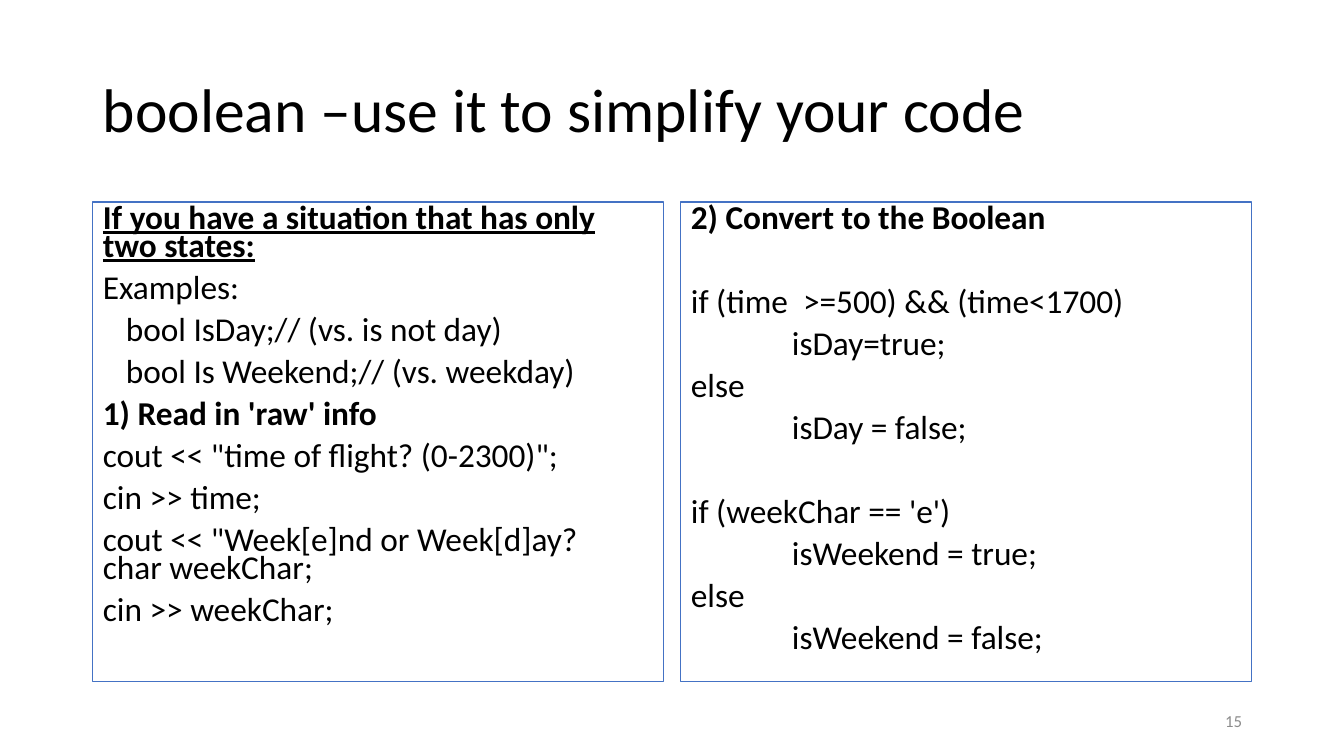
from pptx import Presentation
from pptx.dml.color import RGBColor
from pptx.enum.shapes import MSO_SHAPE as Shape
from pptx.enum.text import MSO_ANCHOR as Anchor, PP_ALIGN as Align
from pptx.util import Pt

PX = 914400 / 100.8


def px(*nums):
    return [round(n * PX) for n in nums]


def style(para, size, color="000000", bold=False, under=False):
    for run in para.runs:
        font = run.font
        font.name, font.size = "Calibri", Pt(size)
        font.bold, font.underline = bold, under
        font.color.rgb = RGBColor.from_string(color)


deck = Presentation()
deck.slide_width, deck.slide_height = px(1344, 756)
slide = deck.slides.add_slide(deck.slide_layouts[6])

# Title and slide number
labels = [
    ("boolean –use it to simplify your code", (93, 40, 1159, 146),
     44, "000000", Align.LEFT, 0.9),
    ("15", (950, 701, 302, 40), 12, "8C8C8C", Align.RIGHT, 1.0),
]
for text, rect, size, color, align, lead in labels:
    frame = slide.shapes.add_textbox(*px(*rect)).text_frame
    frame.word_wrap = True
    frame.vertical_anchor = Anchor.MIDDLE
    frame.text = text
    para = frame.paragraphs[0]
    para.alignment, para.line_spacing = align, lead
    style(para, size, color)

# Columns: text, indent in px, space before in pt, bold, underline
GAP, BREAK = 10, 40
left = [
    ("If you have a situation that has only two states:", 0, GAP, True, True),
    ("Examples:", 0, GAP, False, False),
    ("bool IsDay;// (vs. is not day)", 23, GAP, False, False),
    ("bool Is Weekend;// (vs. weekday)", 23, GAP, False, False),
    ("1) Read in 'raw' info", 0, GAP, True, False),
    ('cout << "time of flight? (0-2300)";', 0, GAP, False, False),
    ("cin >> time;", 0, GAP, False, False),
    ('cout << "Week[e]nd or Week[d]ay?\vchar weekChar;', 0, GAP, False, False),
    ("cin >> weekChar;", 0, GAP, False, False),
]
right = [
    ("2) Convert to the Boolean", 0, GAP, True, False),
    ("if (time  >=500) && (time<1700)", 0, BREAK, False, False),
    ("isDay=true;", 101, GAP, False, False),
    ("else", 0, GAP, False, False),
    ("isDay = false;", 101, GAP, False, False),
    ("if (weekChar == 'e')", 0, BREAK, False, False),
    ("isWeekend = true;", 101, GAP, False, False),
    ("else", 0, GAP, False, False),
    ("isWeekend = false;", 101, GAP, False, False),
]
for col, lines in enumerate([left, right]):
    box = slide.shapes.add_shape(
        Shape.RECTANGLE, *px(93 + 588 * col, 202, 571, 480))
    box.shadow.inherit = False
    box.fill.background()
    box.line.color.rgb = RGBColor.from_string("4472C4")
    box.line.width = Pt(0.75)
    frame = box.text_frame
    frame.word_wrap = True
    frame.vertical_anchor = Anchor.TOP
    for row, (text, dent, gap, bold, under) in enumerate(lines):
        para = frame.add_paragraph() if row else frame.paragraphs[0]
        para.text = text
        para.alignment, para.line_spacing = Align.LEFT, 0.7
        para.space_before = Pt(gap)
        para._p.get_or_add_pPr().set("marL", str(px(dent)[0]))
        style(para, 23.8, bold=bold, under=under)

deck.save("out.pptx")
